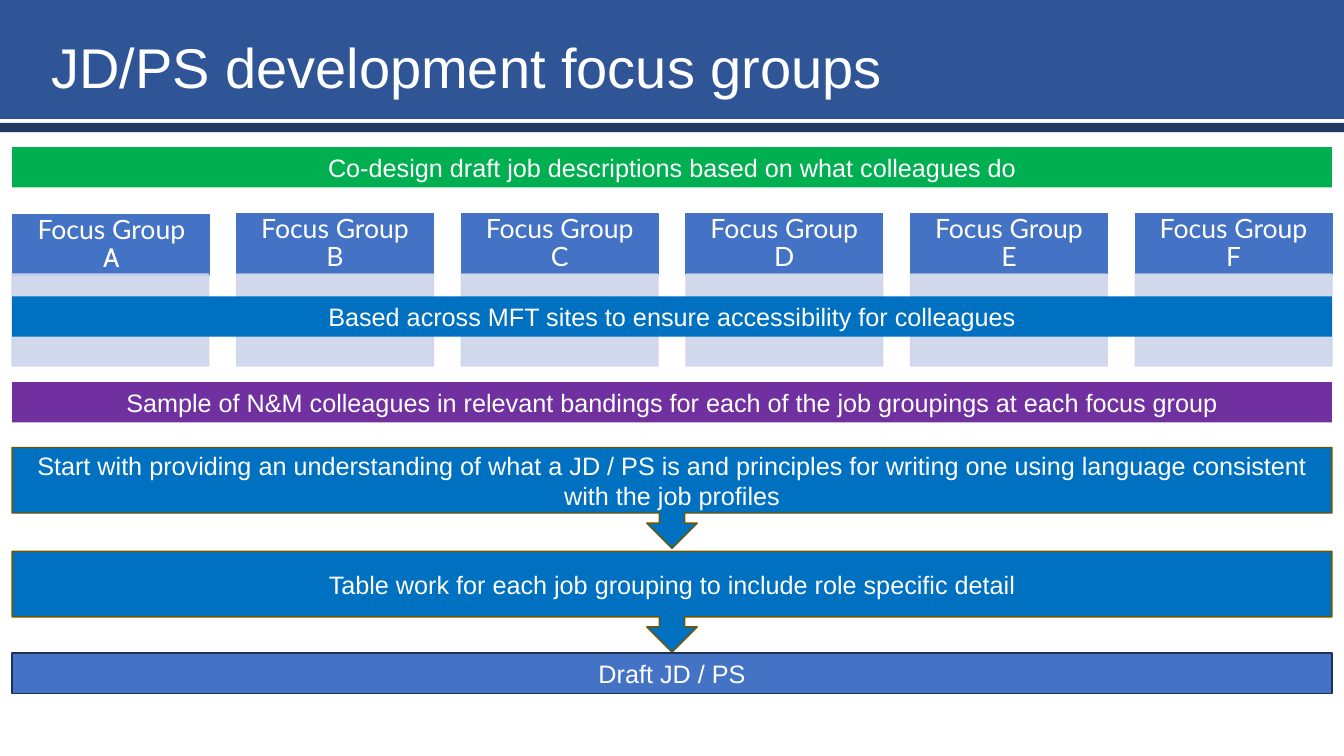
from pptx import Presentation, util as u
from pptx.dml.color import RGBColor
from pptx.enum import shapes, text
from pptx.oxml import parse_xml
from pptx.oxml.ns import nsdecls

# Content: wording, top, height, fill, line, shape kind
RECTANGLE = shapes.MSO_SHAPE.RECTANGLE
CALLOUT = shapes.MSO_SHAPE.DOWN_ARROW_CALLOUT
TITLE = "JD/PS development focus groups"
GROUPS = [["Focus Group", " A"]] + [["Focus Group " + letter] for letter in "BCDEF"]
BARS = [
    ("Sample of N&M colleagues in relevant bandings for each of the job groupings at each focus group",
     3.79, 0.4, "purple", None, RECTANGLE),
    ("Draft JD / PS", 6.48, 0.4, "blue", "draft_line", RECTANGLE),
    ("Co-design draft job descriptions based on what colleagues do",
     1.46, 0.4, "green", None, RECTANGLE),
    ("Start with providing an understanding of what a JD / PS is and principles for writing one "
     "using language consistent with the job profiles",
     4.44, 1, "step", "step_line", CALLOUT),
    ("Table work for each job grouping to include role specific detail",
     5.47, 1, "step", "step_line", CALLOUT),
    ("Based across MFT sites to ensure accessibility for colleagues",
     2.94, 0.4, "step", None, RECTANGLE),
]

THEME = {
    "colours": {"band": "2F5597", "rule": "203864", "blue": "4472C4", "pale": "CFD5EA",
                "purple": "7030A0", "green": "00B050", "step": "0070C0",
                "step_line": "705400", "draft_line": "1E3256", "white": "FFFFFF"},
    "sizes": {"title": 40, "group": 19, "bar": 18},
    "fonts": {"body": "Arial", "group": "Lato", "first_letter": "Cabin"},
}

# Grid
WIDTH, HEIGHT = 13.33, 7.5
MARGIN, CONTENT_WIDTH = 0.12, 13.09
CARD_WIDTH, HEAD_TOP, HEAD_HEIGHT, BODY_HEIGHT = 1.95, 2.12, 0.6, 0.91
PITCH = (CONTENT_WIDTH - CARD_WIDTH) / (len(GROUPS) - 1)


def colour(name):
    return RGBColor.from_string(THEME["colours"][name])


def apply(target, values):
    for name, value in values.items():
        setattr(target, name, value)


def add_block(slide, box, fill, line=None, kind=RECTANGLE, opacity=None):
    shape = slide.shapes.add_shape(kind, *map(u.Inches, box))
    shape.shadow.inherit = False
    shape.fill.solid()
    shape.fill.fore_color.rgb = colour(fill)
    if line:
        shape.line.color.rgb = colour(line)
        shape.line.width = u.Pt(1)
    else:
        shape.line.fill.background()
    if opacity:
        for tint in shape._element.spPr.xpath(".//a:srgbClr"):
            tint.append(parse_xml(f'<a:alpha {nsdecls("a")} val="{opacity * 1000}"/>'))
    return shape


def write(shape, runs, size, fonts, frame_format, paragraph_format):
    frame = shape.text_frame
    apply(frame, {"word_wrap": True, **frame_format})
    paragraph = frame.paragraphs[0]
    apply(paragraph, paragraph_format)
    for words, font in zip(runs, fonts):
        run = paragraph.add_run()
        run.text = words
        apply(run.font, {"name": THEME["fonts"][font], "size": u.Pt(THEME["sizes"][size])})
        run.font.color.rgb = colour("white")


def main():
    presentation = Presentation()
    apply(presentation, {"slide_width": u.Inches(WIDTH), "slide_height": u.Inches(HEIGHT)})
    slide = presentation.slides.add_slide(presentation.slide_layouts[6])
    middle = {"vertical_anchor": text.MSO_ANCHOR.MIDDLE}
    centred = {"alignment": text.PP_ALIGN.CENTER}

    # Header band and rule
    add_block(slide, (0, 0, WIDTH, 1.18), "band")
    add_block(slide, (0, 1.22, WIDTH, 0.09), "rule")

    # Focus group cards, the first head set slightly off the row
    insets = {"margin_left": u.Inches(0.15), "margin_right": u.Inches(0.15),
              "margin_top": u.Inches(0.08), "margin_bottom": u.Inches(0.08)}
    for column, runs in enumerate(GROUPS):
        left = MARGIN + column * PITCH
        nudge = 0.01 if column == 0 else 0
        head = add_block(slide, (left + nudge, HEAD_TOP + nudge, CARD_WIDTH, HEAD_HEIGHT),
                         "blue", "blue")
        write(head, runs, "group", ["group", "first_letter"], {**middle, **insets},
              {**centred, "line_spacing": 0.9})
        add_block(slide, (left, HEAD_TOP + HEAD_HEIGHT, CARD_WIDTH, BODY_HEIGHT),
                  "pale", "pale", opacity=90)

    # Title
    title = slide.shapes.add_textbox(*map(u.Inches, (0.41, 0.21, 9.34, 0.91)))
    write(title, [TITLE], "title", ["body"], {"margin_top": u.Inches(0.11)}, {})

    # Full-width bars and steps
    for words, top, height, fill, line, kind in BARS:
        bar = add_block(slide, (MARGIN, top, CONTENT_WIDTH, height), fill, line, kind)
        write(bar, [words], "bar", ["body"], middle, centred)

    presentation.save("out.pptx")


if __name__ == "__main__":
    main()
